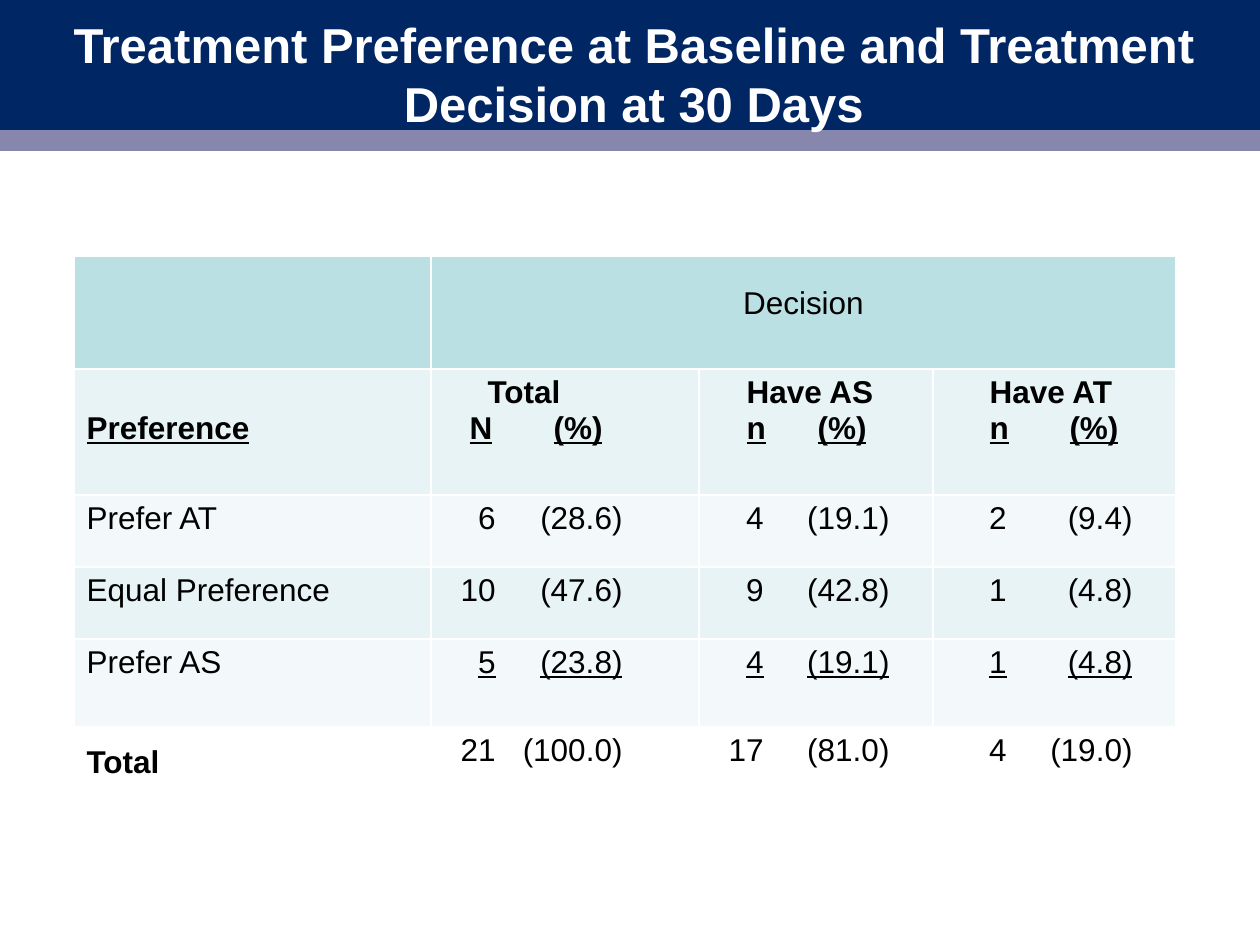
"""Build a slide that tabulates treatment preference against the decision at 30 days."""
from dataclasses import dataclass

import lxml.etree
import pptx
import pptx.dml.color
import pptx.enum.shapes
import pptx.enum.text
import pptx.oxml.ns
import pptx.util

EMU_PER_PX = 914400 / 126


@dataclass(frozen=True)
class Theme:
    font: str = "Arial"
    navy: str = "002664"
    lavender: str = "8787AD"
    white: str = "FFFFFF"
    black: str = "000000"
    heading_fill: str = "BBE0E3"
    dark_band: str = "E7F3F4"
    light_band: str = "F3F9FA"
    title_size: int = 28
    table_size: int = 18


@dataclass(frozen=True)
class Column:
    heading: str
    count_label: str
    heading_indent: int
    label_stops: tuple
    value_stops: tuple


@dataclass(frozen=True)
class Row:
    label: str
    values: tuple
    fill: str
    underline: bool = False
    total: bool = False


THEME = Theme()
COLUMN_WIDTHS = (357, 268, 234, 243)
ROW_HEIGHTS = (113, 126, 72, 72, 88, 72)
COLUMNS = (
    Column("Total", "N", 44, (("l", 26), ("r", 159)), (("r", 52), ("r", 179))),
    Column("Have AS", "n", 35, (("l", 35), ("r", 155)), (("r", 52), ("r", 178))),
    Column("Have AT", "n", 44, (("l", 44), ("r", 173)), (("r", 61), ("r", 187))),
)
ROWS = (
    Row("Prefer AT", (("6", "28.6"), ("4", "19.1"), ("2", "9.4")), THEME.light_band),
    Row("Equal Preference", (("10", "47.6"), ("9", "42.8"), ("1", "4.8")), THEME.dark_band),
    Row("Prefer AS", (("5", "23.8"), ("4", "19.1"), ("1", "4.8")), THEME.light_band, underline=True),
    Row("Total", (("21", "100.0"), ("17", "81.0"), ("4", "19.0")), THEME.white, total=True),
)


def px(length: int) -> pptx.util.Emu:
    """Turn px into EMU."""
    return pptx.util.Emu(round(length * EMU_PER_PX))


def rgb(color: str) -> pptx.dml.color.RGBColor:
    """Turn a hex string into a colour."""
    return pptx.dml.color.RGBColor.from_string(color)


def add_span(para, text: str, size: int = THEME.table_size, color: str = THEME.black,
             bold: bool = False, underline: bool = False) -> None:
    """Add one formatted run to a paragraph."""
    span = para.add_run()
    span.text = text
    span.font.name = THEME.font
    span.font.size = pptx.util.Pt(size)
    span.font.color.rgb = rgb(color)
    span.font.bold = bold
    span.font.underline = underline


def set_tab_stops(para, stops: tuple) -> None:
    """Give a paragraph its tab stops, each an alignment and a px position."""
    qn = pptx.oxml.ns.qn
    tab_list = lxml.etree.SubElement(para._p.get_or_add_pPr(), qn("a:tabLst"))
    for alignment, position in stops:
        lxml.etree.SubElement(tab_list, qn("a:tab"), pos=str(px(position)), algn=alignment)


def add_band(page, top: int, height: int, color: str) -> None:
    """Draw a full-width header band."""
    band = page.shapes.add_shape(pptx.enum.shapes.MSO_SHAPE.RECTANGLE,
                                 px(0), px(top), px(1260), px(height))
    band.shadow.inherit = False
    band.fill.solid()
    band.fill.fore_color.rgb = rgb(color)
    band.line.fill.background()


def set_title(page, text: str) -> None:
    """Place the title above the header bands."""
    title = page.shapes.title
    title.left, title.top, title.width, title.height = px(73), px(0), px(1134), px(147)
    page.shapes._spTree.append(title._element)
    frame = title.text_frame
    frame.word_wrap = True
    frame.auto_size = pptx.enum.text.MSO_AUTO_SIZE.NONE
    frame.vertical_anchor = pptx.enum.text.MSO_ANCHOR.MIDDLE
    frame.margin_left = px(0)
    para = frame.paragraphs[0]
    para.alignment = pptx.enum.text.PP_ALIGN.CENTER
    add_span(para, text, THEME.title_size, THEME.white, bold=True)


def fill_cell(cell, color: str):
    """Fill a cell and return its first paragraph."""
    cell.fill.solid()
    cell.fill.fore_color.rgb = rgb(color)
    return cell.text_frame.paragraphs[0]


def write_headings(table) -> None:
    """Write the decision row and the column heading row."""
    for index in range(len(COLUMN_WIDTHS)):
        fill_cell(table.cell(0, index), THEME.heading_fill)
    decision = table.cell(0, 1)
    decision.merge(table.cell(0, 3))
    decision.margin_top = px(30)
    para = decision.text_frame.paragraphs[0]
    para.alignment = pptx.enum.text.PP_ALIGN.CENTER
    add_span(para, "Decision")

    preference = table.cell(1, 0)
    preference.margin_top = px(42)
    add_span(fill_cell(preference, THEME.dark_band), "Preference", bold=True, underline=True)
    for index, column in enumerate(COLUMNS, start=1):
        cell = table.cell(1, index)
        para = fill_cell(cell, THEME.dark_band)
        para._p.get_or_add_pPr().set("marL", str(px(column.heading_indent)))
        add_span(para, column.heading, bold=True)
        para = cell.text_frame.add_paragraph()
        set_tab_stops(para, column.label_stops)
        add_span(para, "\t", bold=True)
        add_span(para, f"{column.count_label}\t(%)", bold=True, underline=True)


def write_row(table, index: int, row: Row) -> None:
    """Write one preference row with its counts and percentages."""
    label = table.cell(index, 0)
    if row.total:
        label.vertical_anchor = pptx.enum.text.MSO_ANCHOR.MIDDLE
    add_span(fill_cell(label, row.fill), row.label, bold=row.total)
    for position, (column, (count, percent)) in enumerate(zip(COLUMNS, row.values), start=1):
        para = fill_cell(table.cell(index, position), row.fill)
        set_tab_stops(para, column.value_stops)
        add_span(para, f"\t{count}\t({percent})", underline=row.underline)


def add_preference_table(page) -> None:
    """Add the table of preferences by decision."""
    table = page.shapes.add_table(len(ROW_HEIGHTS), len(COLUMN_WIDTHS), px(74), px(256),
                                  px(sum(COLUMN_WIDTHS)), px(sum(ROW_HEIGHTS))).table
    table.first_row = table.horz_banding = False
    for column, width in zip(table.columns, COLUMN_WIDTHS):
        column.width = px(width)
    for row, height in zip(table.rows, ROW_HEIGHTS):
        row.height = px(height)
    write_headings(table)
    for index, row in enumerate(ROWS, start=2):
        write_row(table, index, row)


def main() -> None:
    """Build and save the deck."""
    deck = pptx.Presentation()
    deck.slide_width, deck.slide_height = px(1260), px(945)
    page = deck.slides.add_slide(deck.slide_layouts[5])
    add_band(page, 21, 130, THEME.lavender)
    add_band(page, 0, 130, THEME.navy)
    set_title(page, "Treatment Preference at Baseline and Treatment Decision at 30 Days")
    add_preference_table(page)
    deck.save("out.pptx")


if __name__ == "__main__":
    main()
